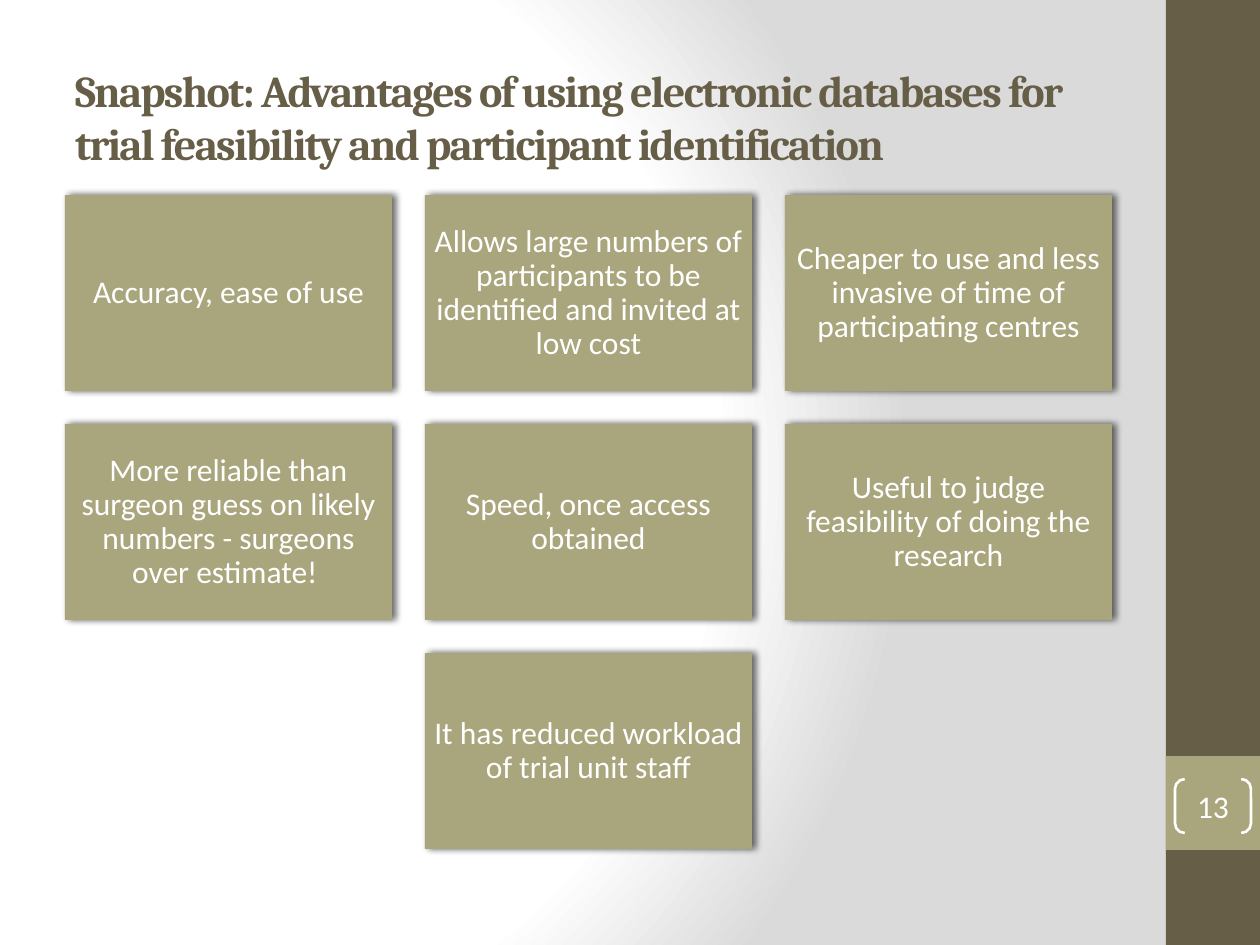
from lxml import etree
from pptx import Presentation, util
from pptx.dml.color import RGBColor
from pptx.enum import shapes, text

A = "http://schemas.openxmlformats.org/drawingml/2006/main"
SCALE = 914400 / 126  # EMU per px
BROWN, OLIVE, WHITE = "675E47", "A9A57C", "FFFFFF"
SHADOW = f"""<a:outerShdw xmlns:a="{A}" blurRad="50800" dist="25400" dir="0" rotWithShape="0">
  <a:srgbClr val="000000"><a:alpha val="60000"/></a:srgbClr></a:outerShdw>"""
BACKGROUND = f"""<a:gradFill xmlns:a="{A}" rotWithShape="1"><a:gsLst>
  <a:gs pos="0"><a:srgbClr val="FFFFFF"/></a:gs>
  <a:gs pos="75000"><a:srgbClr val="FFFFFF"/></a:gs>
  <a:gs pos="100000"><a:srgbClr val="DADADA"/></a:gs></a:gsLst>
  <a:path path="circle"><a:fillToRect l="20000" t="50000" r="100000" b="50000"/></a:path>
  </a:gradFill>"""


def px(*lengths):
    return [util.Emu(round(length * SCALE)) for length in lengths]


def add_box(kind, place, fill=None, words="", margin=9, **font):
    """Add a shape without outline or shadow, with its text centred."""
    box = page.shapes.add_shape(kind, *px(*place))
    box.shadow.inherit = False
    box.line.fill.background()
    if fill:
        box.fill.solid()
        box.fill.fore_color.rgb = RGBColor.from_string(fill)
    else:
        box.fill.background()
    if words:
        frame = box.text_frame
        frame.word_wrap = True
        frame.vertical_anchor = text.MSO_ANCHOR.MIDDLE
        for side in ("left", "top", "right", "bottom"):
            setattr(frame, f"margin_{side}", px(margin)[0])
        para = frame.paragraphs[0]
        para.alignment = text.PP_ALIGN.CENTER
        span = para.add_run()
        span.text = words
        span.font.color.rgb = RGBColor.from_string(font.pop("color", WHITE))
        for name, value in {"name": "Calibri", "size": util.Pt(18), **font}.items():
            setattr(span.font, name, value)
    return box


deck = Presentation()
deck.slide_width, deck.slide_height = px(1260, 945)
page = deck.slides.add_slide(deck.slide_layouts[6])

page.background.fill.solid()
background = page.element.xpath(".//p:bgPr")[0]
background.replace(background[0], etree.fromstring(BACKGROUND))

RECT = shapes.MSO_SHAPE.RECTANGLE
add_box(RECT, (1166, 0, 94, 945), BROWN)
add_box(RECT, (1166, 756, 94, 94), OLIVE)

title = add_box(RECT, (63, 38, 1050, 157), None,
                "Snapshot: Advantages of using electronic databases for trial feasibility "
                "and participant identification",
                margin=12, name="Cambria", size=util.Pt(25.2), bold=True, color=BROWN)
heading = title.text_frame.paragraphs[0]
heading.alignment = text.PP_ALIGN.LEFT
heading.runs[0].font.language_id = None
heading.runs[0]._r.get_or_add_rPr().set("spc", "-100")

# Cards fill a three-column grid; the single last card sits in the middle column.
advantages = [
    "Accuracy, ease of use",
    "Allows large numbers of participants to be identified and invited at low cost",
    "Cheaper to use and less invasive of time of participating centres",
    "More reliable than surgeon guess on likely numbers - surgeons over estimate! ",
    "Speed, once access obtained",
    "Useful to judge feasibility of doing the research",
    "It has reduced workload of trial unit staff",
]
for index, advantage in enumerate(advantages):
    row, column = divmod(index, 3)
    if index == len(advantages) - 1:
        column = 1
    card = add_box(RECT, (65 + 360 * column, 195 + 229 * row, 327, 196), OLIVE, advantage)
    card.text_frame.paragraphs[0].line_spacing = 0.9
    card.element.spPr.find(f"{{{A}}}effectLst").append(etree.fromstring(SHADOW))

number = add_box(shapes.MSO_SHAPE.DOUBLE_BRACKET, (1175, 779, 76, 54), None, "13", margin=0)
number.adjustments[0] = 0.18
number.line.color.rgb = RGBColor.from_string(WHITE)
number.line.width = util.Pt(1.5)

deck.save("out.pptx")
